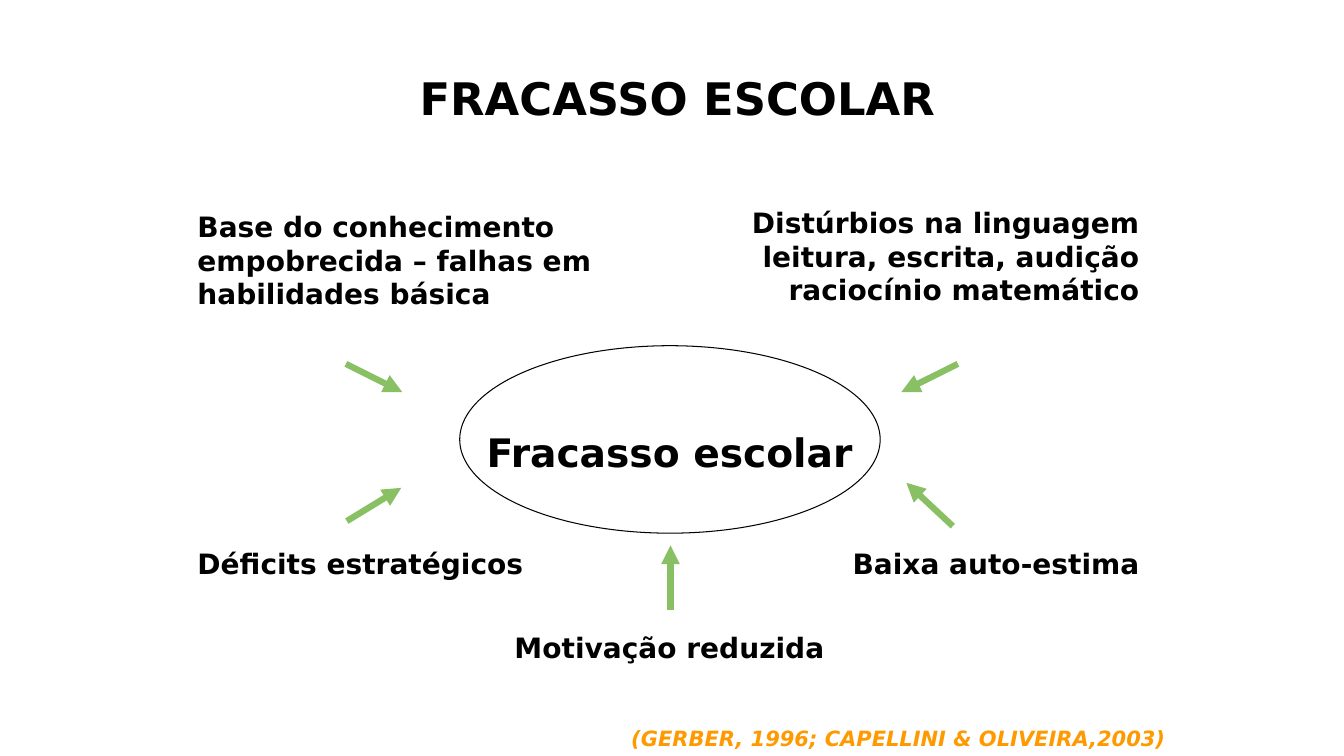
"""Build the "Fracasso escolar" slide: five causes pointing at a central ellipse."""
from dataclasses import dataclass

from lxml import etree
from pptx import Presentation
from pptx.dml.color import RGBColor
from pptx.enum.shapes import MSO_CONNECTOR as Conn, MSO_SHAPE as Shp
from pptx.enum.text import MSO_AUTO_SIZE as Auto, PP_ALIGN as Align
from pptx.oxml.ns import qn
from pptx.slide import Slide
from pptx.util import Inches, Pt

BLACK = RGBColor(0x00, 0x00, 0x00)
WHITE = RGBColor(0xFF, 0xFF, 0xFF)
GREEN = RGBColor(0x89, 0xC0, 0x64)
ORANGE = RGBColor(0xFF, 0x99, 0x00)
FONT = "DejaVu Sans"
LEFT, MIDDLE, RIGHT, WIDTH = 1.86, 4.4, 6.92, 4.48


@dataclass(frozen=True)
class Label:
    text: str
    x: float
    y: float
    h: float = 0.43
    w: float = WIDTH
    align: Align = Align.LEFT
    size: int = 20
    color: RGBColor = BLACK
    italic: bool = False
    wrap: bool = True
    indent: float = 0


@dataclass(frozen=True)
class Arrow:
    x1: float
    y1: float
    x2: float
    y2: float


CITATION = Label("(GERBER, 1996; CAPELLINI & OLIVEIRA,2003)", 5.98, 7.15, 0.35, 5.68,
                 Align.RIGHT, 15, ORANGE, italic=True, wrap=False)
TITLE = Label("FRACASSO ESCOLAR", LEFT, 0.65, 0.63, 9.22, Align.CENTER, 32, indent=0.5)
CAUSES = [
    Label("Base do conhecimento empobrecida – falhas em habilidades básica", LEFT, 2.03, 1.1),
    Label("Distúrbios na linguagem leitura, escrita, audição raciocínio matemático",
          RIGHT, 1.99, 1.1, align=Align.RIGHT),
    Label("Déficits estratégicos", LEFT, 5.37),
    Label("Baixa auto-estima", RIGHT, 5.37, align=Align.RIGHT),
    Label("Motivação reduzida", MIDDLE, 6.21, align=Align.CENTER),
]
CENTER = Label("Fracasso escolar", MIDDLE, 4.2, 0.57, align=Align.CENTER, size=28)
ARROWS = [
    Arrow(6.65, 6.05, 6.65, 5.41),
    Arrow(9.45, 5.22, 8.99, 4.79),
    Arrow(9.5, 3.61, 8.94, 3.89),
    Arrow(3.44, 5.17, 3.98, 4.84),
    Arrow(3.43, 3.61, 3.99, 3.89),
]


def add_label(s: Slide, label: Label) -> None:
    """Add a bold text box."""
    box = s.shapes.add_textbox(*map(Inches, (label.x, label.y, label.w, label.h)))
    tf = box.text_frame
    tf.word_wrap = label.wrap
    tf.auto_size = Auto.SHAPE_TO_FIT_TEXT
    p = tf.paragraphs[0]
    p.alignment = label.align
    if label.indent:
        p._p.get_or_add_pPr().set("marL", str(Inches(label.indent)))
    r = p.add_run()
    r.text = label.text
    formats = {"name": FONT, "size": Pt(label.size), "bold": True, "italic": label.italic}
    for name, value in formats.items():
        setattr(r.font, name, value)
    r.font.color.rgb = label.color


def add_ellipse(s: Slide) -> None:
    """Add the central ellipse."""
    sp = s.shapes.add_shape(Shp.OVAL, *map(Inches, (4.56, 3.43, 4.17, 1.86)))
    sp.shadow.inherit = False
    sp.fill.solid()
    sp.fill.fore_color.rgb = WHITE
    sp.line.color.rgb = BLACK
    sp.line.width = Pt(0.75)


def add_arrow(s: Slide, arrow: Arrow) -> None:
    """Add a green arrow with a triangular head at its end."""
    ends = map(Inches, (arrow.x1, arrow.y1, arrow.x2, arrow.y2))
    cx = s.shapes.add_connector(Conn.STRAIGHT, *ends)
    cx.line.color.rgb = GREEN
    cx.line.width = Pt(4.5)
    etree.SubElement(cx.line._get_or_add_ln(), qn("a:tailEnd"), type="triangle")
    etree.SubElement(cx._element.spPr, qn("a:effectLst"))


def main() -> None:
    """Draw the slide and save it."""
    prs = Presentation()
    prs.slide_width, prs.slide_height = Inches(13.33), Inches(7.5)
    s = prs.slides.add_slide(prs.slide_layouts[6])
    for label in (CITATION, TITLE, *CAUSES):
        add_label(s, label)
    add_ellipse(s)
    add_label(s, CENTER)
    for arrow in ARROWS:
        add_arrow(s, arrow)
    prs.save("out.pptx")


if __name__ == "__main__":
    main()
